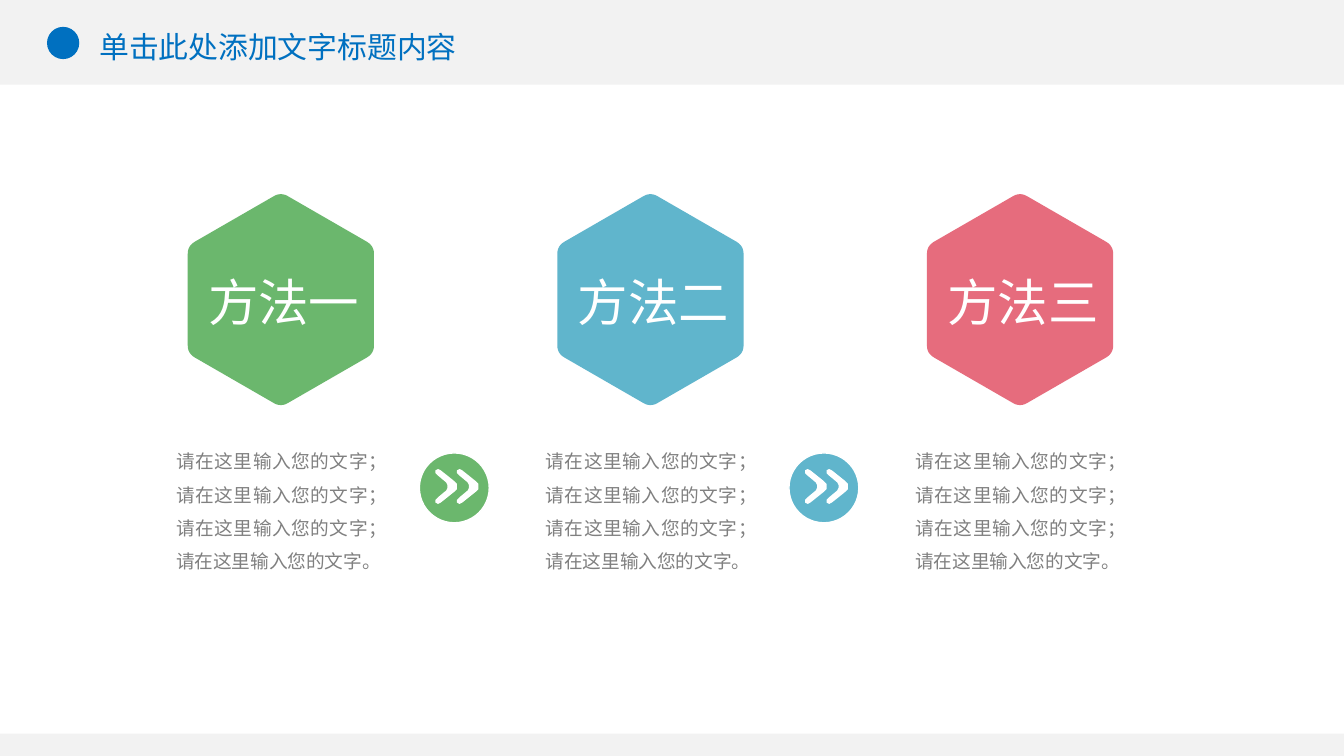
"""Build a slide of three method columns linked by chevron badges."""
import math

import lxml.etree
import pptx
import pptx.dml.color
import pptx.enum.shapes
import pptx.enum.text
import pptx.oxml.ns
import pptx.util

Inches = pptx.util.Inches
Pt = pptx.util.Pt
SHAPES = pptx.enum.shapes.MSO_SHAPE
ALIGN = pptx.enum.text.PP_ALIGN
ANCHOR = pptx.enum.text.MSO_ANCHOR

TITLE = "单击此处添加文字标题内容"
DETAIL = "请在这里输入您的文字；" * 3 + "请在这里输入您的文字。"
METHODS = [("方法一", "green"), ("方法二", "blue"), ("方法三", "red")]

THEME = {
    "colors": {
        "page": "F2F2F2", "white": "FFFFFF", "accent": "0070C0", "text": "808080",
        "green": "6BB76D", "blue": "60B5CC", "red": "E66C7D",
    },
    "east_asian": "Noto Sans CJK SC",
    "title": {"size": Pt(16), "name": "Noto Sans CJK SC", "bold": False},
    "label": {"size": Pt(27), "name": "Calibri"},
    "detail": {"size": Pt(10), "name": "Noto Sans CJK SC"},
}
NARROW = {"margin_left": Inches(0.07), "margin_right": Inches(0.07),
          "margin_top": Inches(0.04), "margin_bottom": Inches(0.04)}

COLUMN_STEP = 2.75
HEXAGON = {"x": 2.09, "y": 2.23, "radius": 0.8, "trim": 0.06}
BADGE = {"left": 3.12, "top": 3.37, "size": 0.52}
CHEVRON_LEFTS = (3.24, 3.4)
CHEVRON_MIDDLE = 3.62
CHEVRON_HALF = [(0.16, 0), (0.16, 0.02), (0.14, 0.04), (0.09, 0.08), (0.04, 0.12),
                (0.02, 0.13), (0, 0.12), (0, 0.1), (0.02, 0.08), (0.08, 0.03), (0.09, 0.01)]


def rgb(name):
    return pptx.dml.color.RGBColor.from_string(THEME["colors"][name])


def paint(shape, color, outline=None):
    shape.shadow.inherit = False
    shape.fill.solid()
    shape.fill.fore_color.rgb = rgb(color)
    if outline:
        shape.line.color.rgb = rgb(outline)
        shape.line.width = Pt(0.75)
    else:
        shape.line.fill.background()


def add_preset(page, kind, area, color, outline=None):
    shape = page.shapes.add_shape(kind, *map(Inches, area))
    paint(shape, color, outline)


def add_outline(page, points, color):
    corners = [(Inches(x), Inches(y)) for x, y in points]
    builder = page.shapes.build_freeform(*corners[0])
    builder.add_line_segments(corners[1:], close=True)
    paint(builder.convert_to_shape(), color)


def write(box, text, style, color, frame_format, paragraph_format):
    frame = box.text_frame
    for key, value in frame_format.items():
        setattr(frame, key, value)
    para = frame.paragraphs[0]
    for key, value in paragraph_format.items():
        setattr(para, key, value)
    span = para.add_run()
    span.text = text
    for key, value in THEME[style].items():
        setattr(span.font, key, value)
    span.font.color.rgb = rgb(color)
    east_asian = lxml.etree.SubElement(span.font._element, pptx.oxml.ns.qn("a:ea"))
    east_asian.set("typeface", THEME["east_asian"])


def toward(start, end, share):
    return tuple(a + (b - a) * share for a, b in zip(start, end))


def rounded_hexagon(x, y, radius, trim):
    corners = [(x + radius * math.sin(math.radians(60 * turn)),
                y - radius * math.cos(math.radians(60 * turn))) for turn in range(6)]
    points = []
    for index, corner in enumerate(corners):
        entry = toward(corner, corners[index - 1], trim / radius)
        leave = toward(corner, corners[(index + 1) % 6], trim / radius)
        for step in range(7):
            share = step / 6
            points.append(toward(toward(entry, corner, share), toward(corner, leave, share), share))
    return points


def chevron(left):
    lower = [(left + x, CHEVRON_MIDDLE + y) for x, y in CHEVRON_HALF]
    upper = [(left + x, CHEVRON_MIDDLE - y) for x, y in reversed(CHEVRON_HALF[1:])]
    return lower + upper


def add_method(page, shift, label, color):
    add_outline(page, rounded_hexagon(**{**HEXAGON, "x": HEXAGON["x"] + shift}), color)
    box = page.shapes.add_textbox(*map(Inches, (1.45 + shift, 1.96, 1.34, 0.56)))
    write(box, label, "label", "white",
          {"word_wrap": False, "vertical_anchor": ANCHOR.MIDDLE}, {"alignment": ALIGN.LEFT})
    box = page.shapes.add_textbox(*map(Inches, (1.24 + shift, 3.23, 1.71, 1.08)))
    write(box, DETAIL, "detail", "text", {**NARROW, "word_wrap": True},
          {"alignment": ALIGN.JUSTIFY, "line_spacing": Pt(17.8)})


def add_badge(page, shift, color):
    size = BADGE["size"]
    add_preset(page, SHAPES.OVAL, (BADGE["left"] + shift, BADGE["top"], size, size), color, "white")
    for left in CHEVRON_LEFTS:
        add_outline(page, chevron(left + shift), "white")


def main():
    deck = pptx.Presentation()
    deck.slide_width = Inches(10)
    deck.slide_height = deck.slide_width * 9 // 16
    page = deck.slides.add_slide(deck.slide_layouts[5])
    page.background.fill.solid()
    page.background.fill.fore_color.rgb = rgb("page")
    add_preset(page, SHAPES.RECTANGLE, (0, 0.63, 10, 4.83), "white")
    add_preset(page, SHAPES.OVAL, (0.35, 0.2, 0.24, 0.24), "accent")

    title = page.shapes.title
    for key, value in {"left": 0.67, "top": 0.18, "width": 2.95, "height": 0.34}.items():
        setattr(title, key, Inches(value))
    write(title, TITLE, "title", "accent",
          {**NARROW, "word_wrap": True, "vertical_anchor": ANCHOR.MIDDLE,
           "auto_size": pptx.enum.text.MSO_AUTO_SIZE.NONE}, {"alignment": ALIGN.LEFT})

    for index, (label, color) in enumerate(METHODS):
        add_method(page, index * COLUMN_STEP, label, color)
        if index < len(METHODS) - 1:
            add_badge(page, index * COLUMN_STEP, color)
    deck.save("out.pptx")


if __name__ == "__main__":
    main()
